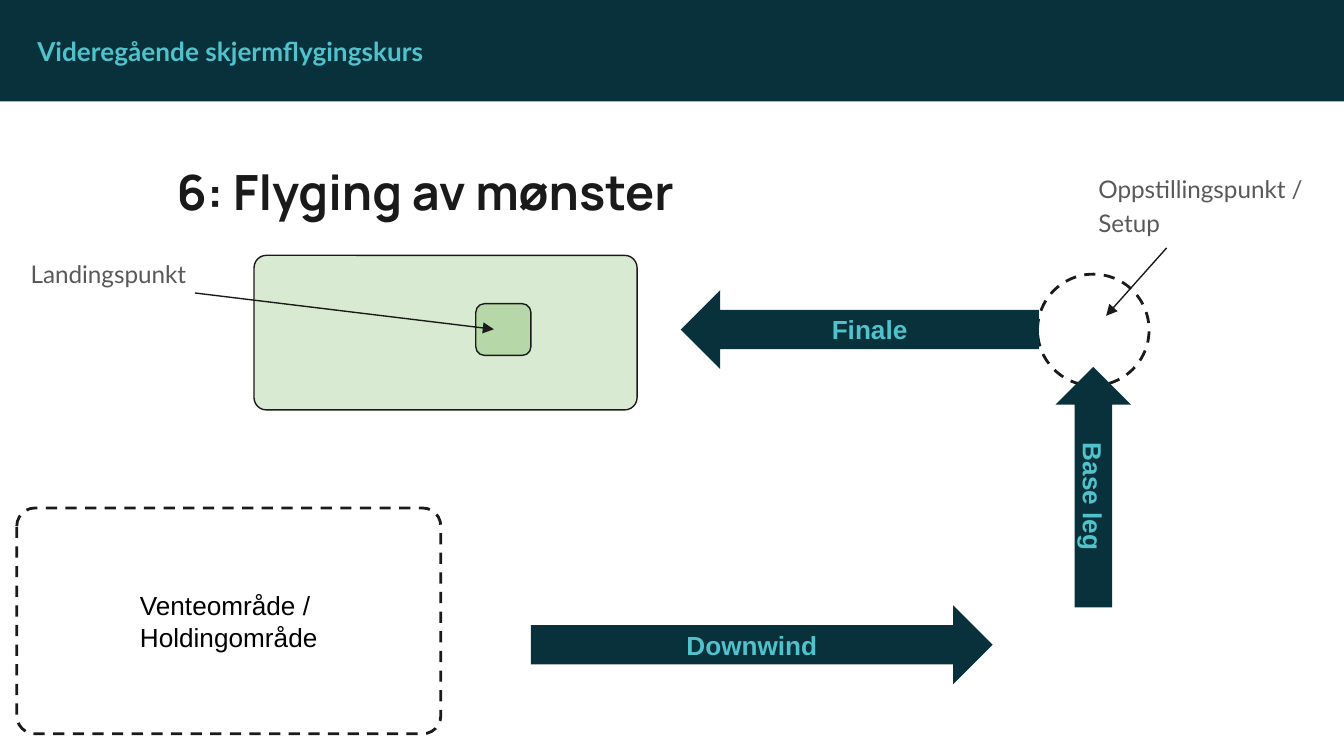
from lxml.etree import SubElement
from pptx import Presentation
from pptx.dml.color import RGBColor
from pptx.enum.dml import MSO_LINE
from pptx.enum.shapes import MSO_CONNECTOR, MSO_SHAPE as SHAPE
from pptx.enum.text import MSO_ANCHOR as ANCHOR, MSO_AUTO_SIZE, PP_ALIGN as ALIGN
from pptx.oxml.ns import qn
from pptx.util import Pt

PX = 4572  # 200 px to the inch
PETROL = RGBColor(0x08, 0x31, 0x3B)
TURQUOISE = RGBColor(0x50, 0xC2, 0xCC)
INK = RGBColor(0x1A, 0x1A, 0x1A)
GREY = RGBColor(0x59, 0x59, 0x59)
BLACK = RGBColor(0, 0, 0)
FIELD_GREEN = RGBColor(0xD9, 0xEA, 0xD3)
SPOT_GREEN = RGBColor(0xB6, 0xD7, 0xA8)

prs = Presentation()
prs.slide_width, prs.slide_height = 2000 * PX, 1125 * PX
slide = prs.slides.add_slide(prs.slide_layouts[5])


def draw(kind, box, fill=None, line_width=None, dashed=False):
    shape = slide.shapes.add_shape(kind, *[n * PX for n in box])
    shape.shadow.inherit = False
    if fill is None:
        shape.fill.background()
    else:
        shape.fill.solid()
        shape.fill.fore_color.rgb = fill
    if line_width is None:
        shape.line.fill.background()
    else:
        shape.line.color.rgb = INK
        shape.line.width = Pt(line_width)
        if dashed:
            shape.line.dash_style = MSO_LINE.DASH
    return shape


def write(shape, lines, size, font, color, bold=False, align=ALIGN.LEFT, anchor=ANCHOR.TOP):
    frame = shape.text_frame
    frame.word_wrap = True
    frame.auto_size = MSO_AUTO_SIZE.NONE
    frame.vertical_anchor = anchor
    frame.margin_left = frame.margin_right = frame.margin_top = frame.margin_bottom = 20 * PX
    for i, line in enumerate(lines):
        paragraph = frame.add_paragraph() if i else frame.paragraphs[0]
        paragraph.alignment = align
        run = paragraph.add_run()
        run.text = line
        run.font.size = Pt(size)
        run.font.name = font
        run.font.bold = bold
        run.font.color.rgb = color
    return frame


# Header and title
draw(SHAPE.RECTANGLE, (0, 0, 2000, 151), PETROL)
course = slide.shapes.add_textbox(36 * PX, 33 * PX, 652 * PX, 88 * PX)
write(course, ["Videregående skjermflygingskurs"], 14, "Lato", TURQUOISE, bold=True)

title = slide.shapes.title
title.left, title.top, title.width, title.height = 243 * PX, 221 * PX, 1682 * PX, 118 * PX
write(title, ["6: Flyging av mønster"], 26, "Manrope", INK, bold=True)

# Areas of the landing pattern
draw(SHAPE.OVAL, (1544, 408, 166, 166), line_width=1.5, dashed=True)
landing_field = draw(SHAPE.ROUNDED_RECTANGLE, (378, 380, 570, 230), FIELD_GREEN, 0.75)
holding_area = draw(SHAPE.ROUNDED_RECTANGLE, (25, 756, 631, 336), line_width=1.5, dashed=True)
for area in (landing_field, holding_area):
    area.adjustments[0] = 0.08
write(holding_area, ["Venteområde / ", "Holdingområde"], 14, "Arial", BLACK,
      align=ALIGN.CENTER, anchor=ANCHOR.MIDDLE)
draw(SHAPE.FLOWCHART_ALTERNATE_PROCESS, (708, 452, 82, 77), SPOT_GREEN, 0.75)

# Legs of the pattern
for leg, kind, box, rotation in (
    ("Downwind", SHAPE.RIGHT_ARROW, (790, 901, 687, 117), 0),
    ("Finale", SHAPE.LEFT_ARROW, (1013, 432, 533, 117), 0),
    ("Base leg", SHAPE.LEFT_ARROW, (1448, 669, 358, 112), 90),
):
    arrow = draw(kind, box, PETROL)
    arrow.rotation = rotation
    write(arrow, [leg], 14, "Arial", TURQUOISE, bold=True,
          align=ALIGN.CENTER, anchor=ANCHOR.MIDDLE)

# Labels with pointers
for label, box, start, end in (
    ("Oppstillingspunkt / Setup", (1615, 233, 372, 136), (1736, 369), (1646, 470)),
    ("Landingspunkt", (26, 360, 342, 136), (290, 436), (735, 490)),
):
    caption = slide.shapes.add_textbox(*[n * PX for n in box])
    paragraph = write(caption, [label], 13, "Lato", GREY).paragraphs[0]
    paragraph.line_spacing = 1.15
    paragraph.space_after = Pt(16)

    pointer = slide.shapes.add_connector(
        MSO_CONNECTOR.STRAIGHT, *[n * PX for n in start + end])
    pointer.line.color.rgb = INK
    pointer.line.width = Pt(0.75)
    SubElement(pointer.line._get_or_add_ln(), qn("a:tailEnd"), type="triangle")
    SubElement(pointer._element.spPr, qn("a:effectLst"))

prs.save("out.pptx")
